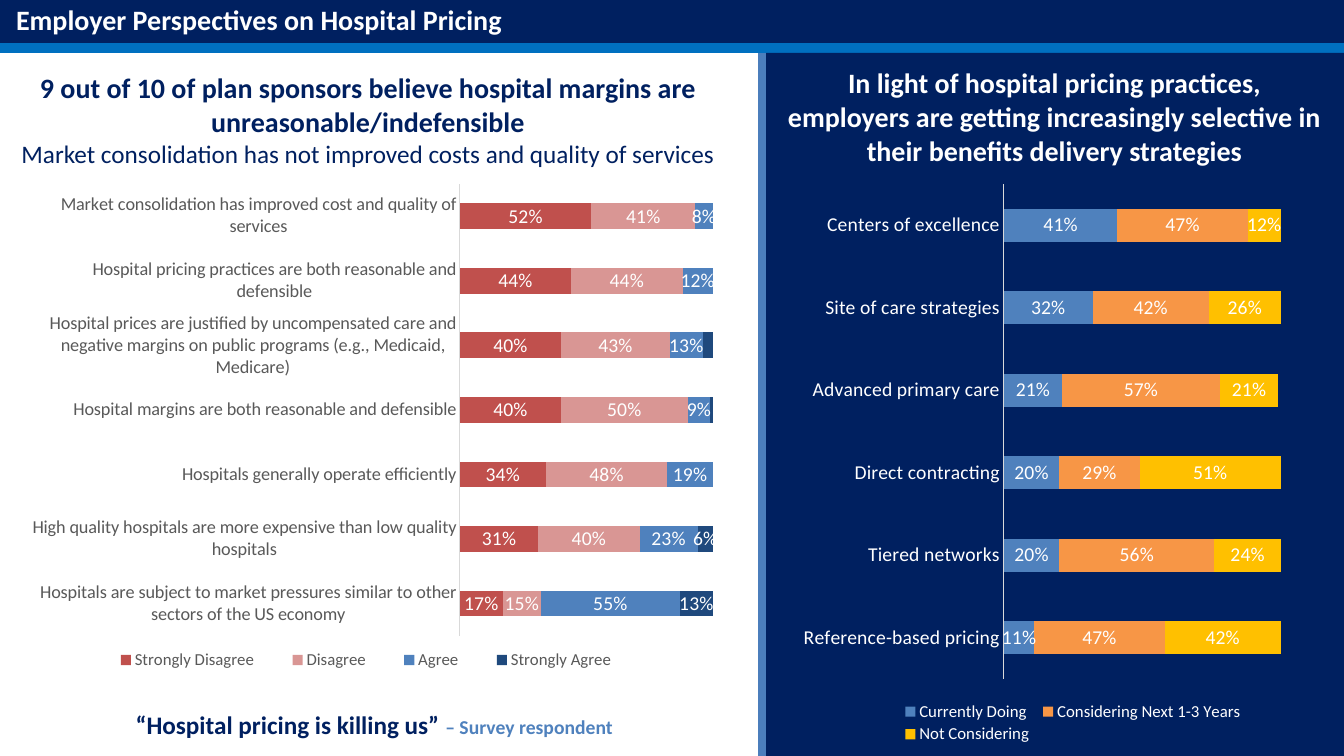
from dataclasses import dataclass

from lxml.etree import SubElement
from pptx import Presentation
from pptx.chart.data import CategoryChartData
from pptx.dml.color import RGBColor
from pptx.enum.chart import XL_CHART_TYPE as ChartType
from pptx.enum.chart import XL_LABEL_POSITION as LabelPosition
from pptx.enum.chart import XL_LEGEND_POSITION as LegendPosition
from pptx.enum.chart import XL_TICK_MARK as TickMark
from pptx.enum.shapes import MSO_CONNECTOR as Connector
from pptx.enum.shapes import MSO_SHAPE as Shape
from pptx.enum.text import MSO_AUTO_SIZE as AutoSize
from pptx.enum.text import PP_ALIGN as Align
from pptx.oxml import parse_xml
from pptx.oxml.ns import nsdecls, qn
from pptx.util import Pt

EMU_PER_PX = 914400 / 100.8


@dataclass(frozen=True)
class Theme:
    font: str = "Calibri"
    navy: str = "002060"
    stripe: str = "0070C0"
    divider: str = "4B7EBC"
    white: str = "FFFFFF"
    grey: str = "595959"
    axis: str = "D9D9D9"
    red: str = "C0504D"
    pink: str = "D99694"
    blue: str = "4F81BD"
    dark_blue: str = "1F497D"
    orange: str = "F79646"
    gold: str = "FFC000"
    heading: int = 20
    subheading: int = 18
    label: int = 14
    statement: int = 13
    legend: int = 12


THEME = Theme()


@dataclass(frozen=True)
class Box:
    left: int
    top: int
    width: int
    height: int

    def emu(self) -> tuple[int, ...]:
        return tuple(map(px, (self.left, self.top, self.width, self.height)))


@dataclass(frozen=True)
class Band:
    box: Box
    color: str


@dataclass(frozen=True)
class Phrase:
    text: str
    size: int
    color: str
    bold: bool = True


@dataclass(frozen=True)
class Caption:
    box: Box
    lines: tuple[tuple[Phrase, ...], ...]


@dataclass(frozen=True)
class Answer:
    name: str
    color: str
    percents: tuple[int, ...]
    unlabelled: tuple[int, ...] = ()


@dataclass(frozen=True)
class Survey:
    box: Box
    plot: Box
    legend: Box
    text_color: str
    category_size: int
    topics: tuple[str, ...]
    answers: tuple[Answer, ...]


BANDS = (
    Band(Box(0, 43, 1344, 10), THEME.stripe),
    Band(Box(0, 0, 1344, 43), THEME.navy),
    Band(Box(766, 53, 578, 703), THEME.navy),
)

CAPTIONS = (
    Caption(Box(776, 61, 557, 112), ((Phrase(
        "In light of hospital pricing practices, employers are getting increasingly "
        "selective in their benefits delivery strategies", THEME.heading, THEME.white),),)),
    Caption(Box(-10, -2, 538, 44), ((Phrase(
        "Employer Perspectives on Hospital Pricing", THEME.heading, THEME.white),),)),
    Caption(Box(0, 66, 736, 109), (
        (Phrase("9 out of 10 of plan sponsors believe hospital margins are "
                "unreasonable/indefensible", THEME.heading, THEME.navy),),
        (Phrase("Market consolidation has not improved costs and quality of services",
                THEME.subheading, THEME.navy, False),))),
    Caption(Box(-69, 704, 891, 40), ((
        Phrase("“Hospital pricing is killing us” ", THEME.subheading, THEME.navy),
        Phrase("– Survey respondent ", THEME.label, THEME.blue)),)),
)

SURVEYS = (
    Survey(
        Box(18, 173, 761, 509), Box(460, 184, 253, 452), Box(88, 646, 556, 28),
        THEME.grey, THEME.statement,
        ("Hospitals are subject to market pressures similar to other sectors of the US economy",
         "High quality hospitals are more expensive than low quality hospitals",
         "Hospitals generally operate efficiently",
         "Hospital margins are both reasonable and defensible",
         "Hospital prices are justified by uncompensated care and negative margins on public "
         "programs (e.g., Medicaid, Medicare)",
         "Hospital pricing practices are both reasonable and defensible",
         "Market consolidation has improved cost and quality of services"),
        (Answer("Strongly Disagree", THEME.red, (17, 31, 34, 40, 40, 44, 52)),
         Answer("Disagree", THEME.pink, (15, 40, 48, 50, 43, 44, 41)),
         Answer("Agree", THEME.blue, (55, 23, 19, 9, 13, 12, 8)),
         Answer("Strongly Agree", THEME.dark_blue, (13, 6, 0, 1, 4, 0, 0), (2, 3, 4, 5, 6)))),
    Survey(
        Box(793, 172, 554, 577), Box(1004, 184, 277, 495), Box(897, 699, 352, 48),
        THEME.white, THEME.label,
        ("Reference-based pricing", "Tiered networks", "Direct contracting",
         "Advanced primary care", "Site of care strategies", "Centers of excellence"),
        (Answer("Currently Doing", THEME.blue, (11, 20, 20, 21, 32, 41)),
         Answer("Considering Next 1-3 Years", THEME.orange, (47, 56, 29, 57, 42, 47)),
         Answer("Not Considering", THEME.gold, (42, 24, 51, 21, 26, 12)))),
)


def px(length: int) -> int:
    return round(length * EMU_PER_PX)


def assign(target, formats: dict) -> None:
    for name, value in formats.items():
        setattr(target, name, value)


def style_font(font, size: int, color: str, bold: bool = False) -> None:
    assign(font, {"name": THEME.font, "size": Pt(size), "bold": bold})
    font.color.rgb = RGBColor.from_string(color)


def paint(fill, color: str) -> None:
    fill.solid()
    fill.fore_color.rgb = RGBColor.from_string(color)


def draw_band(slide, band: Band) -> None:
    bar = slide.shapes.add_shape(Shape.RECTANGLE, *band.box.emu())
    bar.shadow.inherit = False
    paint(bar.fill, band.color)
    bar.line.fill.background()


def draw_divider(slide) -> None:
    divider = slide.shapes.add_connector(Connector.STRAIGHT, px(762), px(53), px(762), px(756))
    divider.line.width = Pt(6)
    divider.line.color.rgb = RGBColor.from_string(THEME.divider)
    SubElement(divider._element.spPr, qn("a:effectLst"))


def draw_caption(slide, caption: Caption) -> None:
    frame = slide.shapes.add_textbox(*caption.box.emu()).text_frame
    assign(frame, {"word_wrap": True, "auto_size": AutoSize.SHAPE_TO_FIT_TEXT})
    for index, phrases in enumerate(caption.lines):
        line = frame.add_paragraph() if index else frame.paragraphs[0]
        line.alignment = Align.CENTER
        for phrase in phrases:
            run = line.add_run()
            run.text = phrase.text
            style_font(run.font, phrase.size, phrase.color, phrase.bold)


def manual_layout(area: Box, chart_box: Box, inner: bool):
    target = '<c:layoutTarget val="inner"/>' if inner else ""
    fractions = {
        "x": (area.left - chart_box.left) / chart_box.width,
        "y": (area.top - chart_box.top) / chart_box.height,
        "w": area.width / chart_box.width,
        "h": area.height / chart_box.height,
    }
    sizes = "".join(f'<c:{key} val="{value:.4f}"/>' for key, value in fractions.items())
    return parse_xml(f'<c:layout {nsdecls("c")}><c:manualLayout>{target}<c:xMode val="edge"/>'
                     f'<c:yMode val="edge"/>{sizes}</c:manualLayout></c:layout>')


def place(parent, layout, before: str) -> None:
    for old in parent.findall(qn("c:layout")):
        parent.remove(old)
    parent.find(qn(before)).addprevious(layout)


def style_answer(series, answer: Answer) -> None:
    paint(series.format.fill, answer.color)
    labels = series.data_labels
    assign(labels, {"show_value": True, "number_format": "0%",
                    "number_format_is_linked": False, "position": LabelPosition.CENTER})
    style_font(labels.font, THEME.label, THEME.white)
    for order, point in enumerate(answer.unlabelled):
        labels._element.insert(order, parse_xml(
            f'<c:dLbl {nsdecls("c")}><c:idx val="{point}"/><c:delete val="1"/></c:dLbl>'))


def draw_survey(slide, survey: Survey) -> None:
    data = CategoryChartData(number_format="0%")
    data.categories = survey.topics
    for answer in survey.answers:
        data.add_series(answer.name, [percent / 100 for percent in answer.percents])
    chart = slide.shapes.add_chart(ChartType.BAR_STACKED, *survey.box.emu(), data).chart
    assign(chart, {"has_title": False, "has_legend": True})
    style_font(chart.font, THEME.label, survey.text_color)
    assign(chart.plots[0], {"gap_width": 150, "overlap": 100, "vary_by_categories": False})
    for series, answer in zip(chart.plots[0].series, survey.answers):
        style_answer(series, answer)

    topics = chart.category_axis
    assign(topics, {"major_tick_mark": TickMark.NONE, "minor_tick_mark": TickMark.NONE,
                    "has_major_gridlines": False})
    style_font(topics.tick_labels.font, survey.category_size, survey.text_color)
    topics.format.line.width = Pt(0.75)
    topics.format.line.color.rgb = RGBColor.from_string(THEME.axis)
    assign(chart.value_axis, {"visible": False, "has_major_gridlines": False,
                              "minimum_scale": 0, "maximum_scale": 1})

    assign(chart.legend, {"position": LegendPosition.BOTTOM, "include_in_layout": False})
    style_font(chart.legend.font, THEME.legend, survey.text_color)
    place(chart._chartSpace.chart.plotArea,
          manual_layout(survey.plot, survey.box, True), "c:barChart")
    place(chart.legend._element, manual_layout(survey.legend, survey.box, False), "c:overlay")


def main() -> None:
    deck = Presentation()
    assign(deck, {"slide_width": px(1344), "slide_height": px(756)})
    slide = deck.slides.add_slide(deck.slide_layouts[6])
    for band in BANDS:
        draw_band(slide, band)
    draw_divider(slide)
    for survey in SURVEYS:
        draw_survey(slide, survey)
    for caption in CAPTIONS:
        draw_caption(slide, caption)
    deck.save("out.pptx")


if __name__ == "__main__":
    main()
